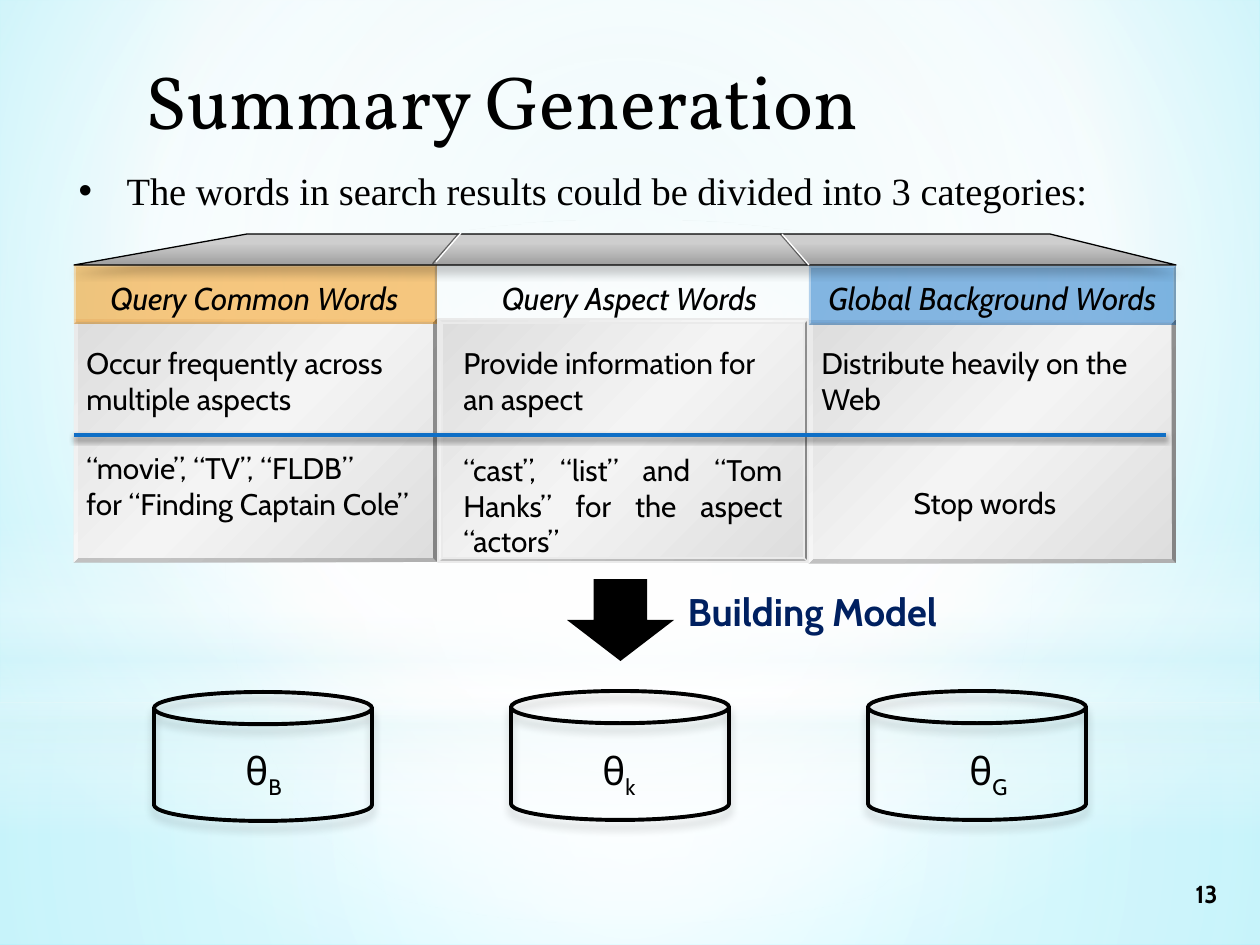
from lxml.etree import SubElement
from pptx import Presentation
from pptx.dml.color import RGBColor
from pptx.enum.shapes import MSO_CONNECTOR, MSO_SHAPE
from pptx.enum.text import MSO_ANCHOR, MSO_AUTO_SIZE, PP_ALIGN
from pptx.oxml.ns import qn
from pptx.util import Emu, Pt

PX_PER_INCH = 126
BLACK = RGBColor(0x00, 0x00, 0x00)
WHITE = RGBColor(0xFF, 0xFF, 0xFF)
NAVY = RGBColor(0x00, 0x20, 0x60)
BLUE = RGBColor(0x0F, 0x6F, 0xC6)
ORANGE = RGBColor(0xF4, 0x91, 0x00)
ICE = RGBColor(0xDB, 0xF5, 0xF9)
PALE_CYAN = RGBColor(0xCA, 0xF0, 0xF6)
CYAN = RGBColor(0x79, 0xED, 0xFF)
EDGE_GRAY = RGBColor(0xEA, 0xEA, 0xEA)
CELL_GRAY = RGBColor(0xDD, 0xDD, 0xDD)
CELL_LIGHT = RGBColor(0xF4, 0xF4, 0xF4)
ROOF_LIGHT = RGBColor(0xCE, 0xCE, 0xCE)
ROOF_DARK = RGBColor(0x9F, 0x9F, 0x9F)

CENTER = (50, 50, 50, 50)
CELL_STOPS = [(0, CELL_GRAY, 100), (50, CELL_LIGHT, 100), (100, CELL_GRAY, 100)]
SOFT_SHADOW = (BLACK, 20, 5, 4, 90)


def px(value):
    return Emu(round(value * 914400 / PX_PER_INCH))


def add_color(parent, color, opacity):
    node = SubElement(parent, qn("a:srgbClr"), val=str(color))
    if opacity < 100:
        SubElement(node, qn("a:alpha"), val=str(opacity * 1000))


def set_gradient(owner, stops, angle=None, focus=None):
    """Turn the solid fill in owner into stops of (percent, colour, opacity)."""
    solid = owner.find(qn("a:solidFill"))
    gradient = SubElement(owner, qn("a:gradFill"), rotWithShape="1")
    owner.replace(solid, gradient)
    stop_list = SubElement(gradient, qn("a:gsLst"))
    for percent, color, opacity in stops:
        add_color(SubElement(stop_list, qn("a:gs"), pos=str(percent * 1000)), color, opacity)
    if focus:
        radial = SubElement(gradient, qn("a:path"), {"path": "circle"})
        sides = {side: str(value * 1000) for side, value in zip("ltrb", focus)}
        SubElement(radial, qn("a:fillToRect"), sides)
    else:
        SubElement(gradient, qn("a:lin"), ang=str(angle * 60000), scaled="0")


def set_shadow(shape, shadow):
    """Shadow is (colour, opacity, blur pt, distance pt, degrees) or None."""
    properties = shape._element.spPr
    for old in properties.findall(qn("a:effectLst")):
        properties.remove(old)
    effects = SubElement(properties, qn("a:effectLst"))
    if shadow:
        color, opacity, blur, distance, angle = shadow
        outer = SubElement(effects, qn("a:outerShdw"), blurRad=str(Pt(blur)),
                           dist=str(Pt(distance)), dir=str(angle * 60000), rotWithShape="0")
        add_color(outer, color, opacity)


def write(paragraph, text, size=17, font="Cabin", color=BLACK, bold=False, italic=False,
          align=PP_ALIGN.LEFT, before=0, subscript=""):
    paragraph.alignment = align
    paragraph.space_before = Pt(before)
    for part in filter(None, (text, subscript)):
        run = paragraph.add_run()
        run.text = part
        run.font.size, run.font.name = Pt(size), font
        run.font.bold, run.font.italic = bold, italic
        run.font.color.rgb = color
    if subscript:
        run._r.get_or_add_rPr().set("baseline", "-25000")


class SlideBuilder:
    def __init__(self, deck):
        self.slide = deck.slides.add_slide(deck.slide_layouts[1])
        self.shapes = self.slide.shapes

    def background(self, stops, focus):
        self.slide.background.fill.solid()
        set_gradient(self.slide._element.find(".//" + qn("p:bgPr")), stops, focus=focus)

    def finish(self, shape, fill=None, opacity=100, stops=None, angle=None, focus=None,
               line=None, weight=0.75, shadow=None):
        if fill or stops:
            shape.fill.solid()
            shape.fill.fore_color.rgb = fill or WHITE
        else:
            shape.fill.background()
        if stops:
            set_gradient(shape._element.spPr, stops, angle, focus)
        elif opacity < 100:
            tint = shape._element.spPr.find(qn("a:solidFill"))[0]
            SubElement(tint, qn("a:alpha"), val=str(opacity * 1000))
        if line is None:
            shape.line.fill.background()
        else:
            shape.line.color.rgb = line
            shape.line.width = Pt(weight)
        set_shadow(shape, shadow)

    def shape(self, preset, box, adjust=None, **style):
        shape = self.shapes.add_shape(preset, *map(px, box))
        if adjust is not None:
            shape.adjustments[0] = adjust
        self.finish(shape, **style)

    def outline(self, points, **style):
        first, *rest = [(px(x), px(y)) for x, y in points]
        builder = self.shapes.build_freeform(*first)
        builder.add_line_segments(rest, close=True)
        self.finish(builder.convert_to_shape(), **style)

    def line(self, start, end, color, weight, shadow):
        line = self.shapes.add_connector(MSO_CONNECTOR.STRAIGHT, *map(px, start + end))
        line.line.color.rgb = color
        line.line.width = Pt(weight)
        set_shadow(line, shadow)

    def text(self, box, *paragraphs, wrap=False, anchor=MSO_ANCHOR.TOP, **style):
        """Each paragraph is a string or a pair of string and own format."""
        frame = self.shapes.add_textbox(*map(px, box)).text_frame
        frame.word_wrap = wrap
        frame.vertical_anchor = anchor
        for number, item in enumerate(paragraphs):
            words, own = (item, {}) if isinstance(item, str) else item
            paragraph = frame.add_paragraph() if number else frame.paragraphs[0]
            write(paragraph, words, **{**style, **own})

    def placeholder(self, index, box, text, indent, hanging=0, bullet=None, **style):
        holder = self.slide.placeholders[index]
        self.shapes._spTree.append(holder._element)  # bring in front of the backdrop
        holder.left, holder.top, holder.width, holder.height = map(px, box)
        frame = holder.text_frame
        frame.auto_size = MSO_AUTO_SIZE.NONE
        frame.vertical_anchor = MSO_ANCHOR.TOP
        paragraph = frame.paragraphs[0]
        write(paragraph, text, **style)
        properties = paragraph._p.get_or_add_pPr()
        properties.set("marL", str(px(indent)))
        properties.set("indent", str(px(-hanging)))
        if bullet:
            SubElement(properties, qn("a:buChar"), char=bullet)


def draw_backdrop(page):
    page.background([(0, PALE_CYAN, 100), (60, WHITE, 100), (100, CYAN, 100)], (20, 10, 20, 60))
    page.shape(MSO_SHAPE.RECTANGLE, (0, 703, 1260, 242), focus=CENTER,
               stops=[(0, WHITE, 91), (37, WHITE, 76), (100, ICE, 79)])
    page.shape(MSO_SHAPE.RECTANGLE, (0, 0, 1260, 703), focus=CENTER,
               stops=[(0, WHITE, 89), (48, WHITE, 62), (100, ICE, 79)])
    page.shape(MSO_SHAPE.RECTANGLE, (0, 519, 1260, 315), angle=90,
               stops=[(0, WHITE, 0), (29, WHITE, 30), (45, ICE, 40),
                      (55, WHITE, 26), (65, ICE, 60), (100, WHITE, 0)])
    page.shape(MSO_SHAPE.OVAL, (0, 220, 1260, 703), focus=CENTER,
               stops=[(0, WHITE, 100), (56, WHITE, 0)])


def draw_categories(page):
    justified = {"align": PP_ALIGN.JUSTIFY}
    columns = [
        (74, 363, 319, ORANGE, None, "Query Common Words", (84, 273, 341), (74, 350),
         ["Occur frequently across multiple aspects",
          ("“movie”, “TV”, “FLDB”", {**justified, "before": 19}),
          ("for “Finding Captain Cole”", justified)]),
        (438, 370, 319, None, EDGE_GRAY, "Query Aspect Words", (474, 273, 311), (451, 344),
         ["Provide information for an aspect",
          ("“cast”, “list” and “Tom Hanks” for the aspect “actors”",
           {**justified, "before": 20})]),
        (809, 367, 320, BLUE, None, "Global Background Words", (798, 273, 389), (809, 352),
         ["Distribute heavily on the", "Web",
          ("Stop words", {"align": PP_ALIGN.CENTER, "before": 39})]),
    ]
    for left, width, top, tint, edge, heading, label, cell, details in columns:
        page.shape(MSO_SHAPE.BEVEL, (left, top, width, 243), adjust=0.016,
                   stops=CELL_STOPS, angle=45, line=edge)
        if tint:
            page.shape(MSO_SHAPE.BEVEL, (left, top - 54, width, 59), adjust=0.037,
                       fill=tint, opacity=50)
        page.text((*label, 50), heading, size=18, italic=True, align=PP_ALIGN.CENTER)
        page.text((cell[0], 339, cell[1], 200), *details, wrap=True)

    page.outline([(74, 265), (247, 234), (1050, 234), (1176, 265)], angle=90,
                 stops=[(28, ROOF_LIGHT, 100), (100, ROOF_DARK, 100)],
                 line=BLACK, shadow=SOFT_SHADOW)
    page.line((436, 262), (461, 233), WHITE, 0.75, (BLACK, 50, 0, 2.2, 153))
    page.line((809, 265), (782, 234), WHITE, 0.75, (BLACK, 50, 0, 1, 180))
    page.line((74, 435), (1166, 435), BLUE, 2, (BLACK, 45, 3.1, 1.8, 90))


def draw_models(page):
    page.shape(MSO_SHAPE.DOWN_ARROW, (567, 579, 107, 82), fill=BLACK)
    page.text((667, 582, 291, 59), "Building Model", size=22, color=NAVY, bold=True,
              align=PP_ALIGN.CENTER)
    for left, top, theta_left, name in [(154, 692, 233, "B"), (511, 691, 590, "k"),
                                        (868, 691, 957, "G")]:
        page.shape(MSO_SHAPE.CAN, (left, top, 218, 129), line=BLACK, weight=2.25,
                   shadow=SOFT_SHADOW)
        page.text((theta_left, 741, 80, 59), "θ", size=22, subscript=name, wrap=True)


def main():
    deck = Presentation()
    deck.slide_width, deck.slide_height = px(1260), px(945)
    page = SlideBuilder(deck)
    draw_backdrop(page)
    page.text((1145, 869, 123, 50), "13", size=14, bold=True, align=PP_ALIGN.CENTER,
              anchor=MSO_ANCHOR.MIDDLE)
    page.placeholder(0, (95, 48, 998, 117), "Summary Generation", indent=38,
                     size=43, font="Vollkorn")
    page.placeholder(1, (66, 161, 1140, 59),
                     "The words in search results could be divided into 3 categories:",
                     indent=48, hanging=48, bullet="•", size=22, font="Times New Roman")
    draw_categories(page)
    draw_models(page)
    deck.save("out.pptx")


if __name__ == "__main__":
    main()
